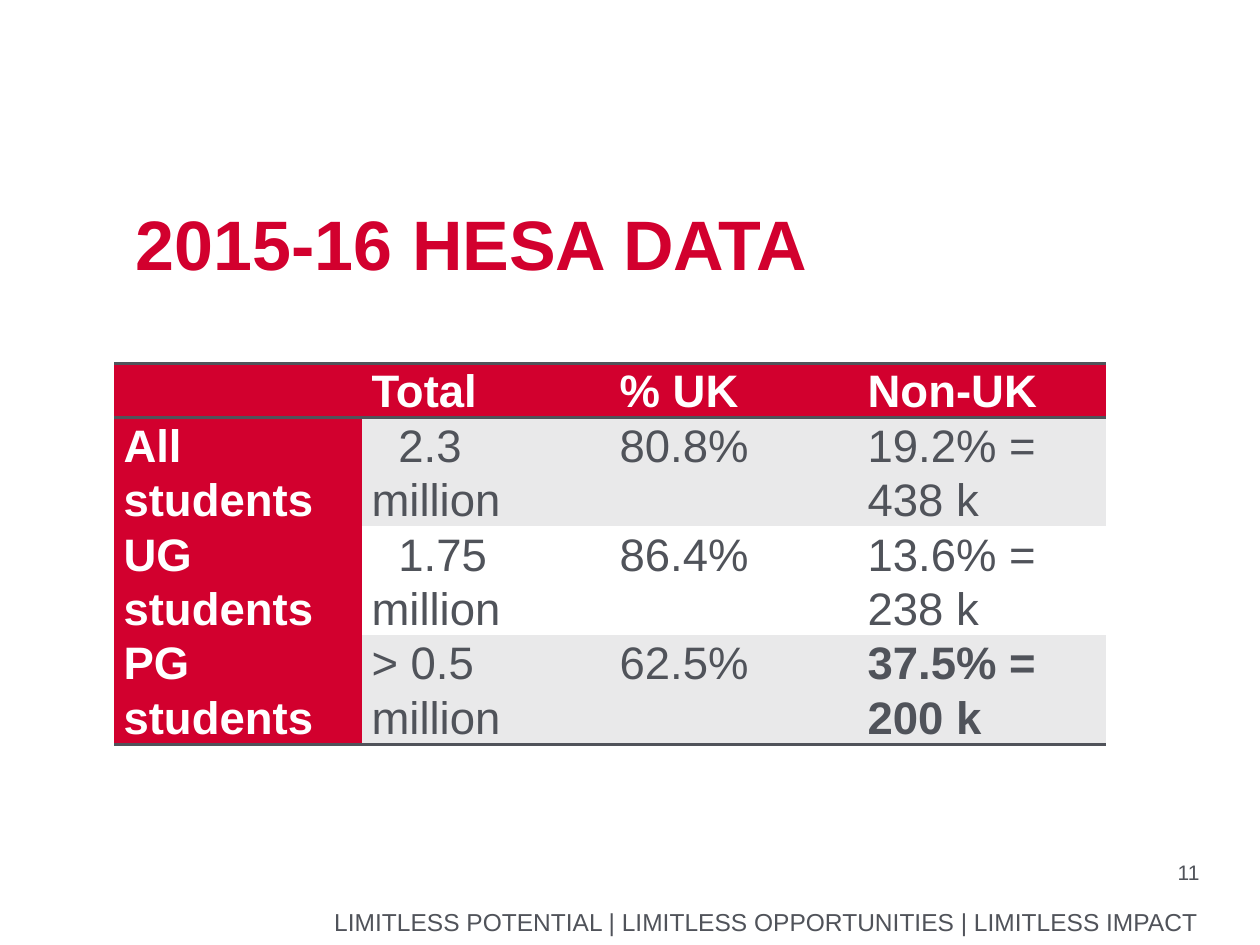
"""Build a slide with a table of student numbers by level and origin."""
from lxml.etree import SubElement as Sub
from pptx import Presentation
from pptx.dml.color import RGBColor
from pptx.enum.text import MSO_ANCHOR as Anchor, PP_ALIGN as Align
from pptx.oxml.ns import qn
from pptx.util import Cm, Pt

RED, GREY, PALE, WHITE = "D2002E", "50535A", "E9E9EA", "FFFFFF"
NO_GRID = "{2D5ABB26-0587-4C30-8999-92F81FD0307C}"
TITLE = "2015-16 HESA DATA"
MOTTO = "LIMITLESS POTENTIAL | LIMITLESS OPPORTUNITIES | LIMITLESS IMPACT"
NUMBER = "11"
ROWS = [
    ["", "Total", "% UK", "Non-UK"],
    ["All students", "2.3 million", "80.8%", "19.2% = 438 k"],
    ["UG students", "1.75 million", "86.4%", "13.6% = 238 k"],
    ["PG students", "> 0.5 million", "62.5%", "37.5% = 200 k"],
]
STRONG = {(3, 3)}
INDENT = {(1, 1), (2, 1)}
WIDE, LOW, HIGH = Cm(5), Cm(1.1), Cm(2.19)


def style(para, size, color, bold=False):
    font = para.font
    font.name, font.size, font.bold = "Arial", Pt(size), bold
    font.color.rgb = RGBColor.from_string(color)


def place(shape, left, top, width, height):
    shape.left, shape.top = Cm(left), Cm(top)
    shape.width, shape.height = Cm(width), Cm(height)


def fill_box(shape, text, size, color, bold=False, align=Align.LEFT, inset=0):
    frame = shape.text_frame
    frame.text = text
    frame.word_wrap = True
    frame.vertical_anchor = Anchor.BOTTOM
    frame.margin_left = Cm(inset)
    frame.margin_top = frame.margin_right = frame.margin_bottom = 0
    para = frame.paragraphs[0]
    para.alignment = align
    style(para, size, color, bold)


def rule(cell, side):
    line = Sub(cell._tc.get_or_add_tcPr(), qn("a:" + side), w=str(Pt(2)))
    Sub(Sub(line, qn("a:solidFill")), qn("a:srgbClr"), val=GREY)


def fill_cell(cell, row, col):
    head = row == 0 or col == 0
    if row == 0:
        rule(cell, "lnT")
    if row in (0, len(ROWS) - 1):
        rule(cell, "lnB")
    cell.fill.solid()
    back = RED if head else PALE if row % 2 else WHITE
    cell.fill.fore_color.rgb = RGBColor.from_string(back)
    cell.margin_left = cell.margin_right = Cm(0.19)
    cell.margin_top = cell.margin_bottom = 0
    cell.text = ROWS[row][col]
    para = cell.text_frame.paragraphs[0]
    para.line_spacing = 1.07
    if (row, col) in INDENT:
        para._p.get_or_add_pPr().set("indent", str(Cm(0.54)))
    style(para, 26, WHITE if head else GREY, head or (row, col) in STRONG)


def add_grid(slide):
    count = len(ROWS[0])
    deep = LOW + HIGH * (len(ROWS) - 1)
    frame = slide.shapes.add_table(
        len(ROWS), count, Cm(2.3), Cm(7.32), WIDE * count, deep)
    table = frame.table
    table.first_row = table.horz_banding = False
    table._tbl.tblPr.find(qn("a:tableStyleId")).text = NO_GRID
    for column in table.columns:
        column.width = WIDE
    for row, line in enumerate(table.rows):
        line.height = HIGH if row else LOW
        for col, cell in enumerate(line.cells):
            fill_cell(cell, row, col)


def main():
    deck = Presentation()
    deck.slide_width, deck.slide_height = Cm(25.4), Cm(19.05)
    slide = deck.slides.add_slide(deck.slide_layouts[5])
    title = slide.shapes.title
    place(title, 1.17, 3.43, 23.72, 2.31)
    fill_box(title, TITLE, 40, RED, bold=True, inset=1.57)
    add_grid(slide)
    for text, size, spot in [
        (MOTTO, 14, (5.36, 18.26, 18.8, 0.61)),
        (NUMBER, 12, (22.3, 17.32, 1.88, 0.6)),
    ]:
        box = slide.shapes.add_textbox(*map(Cm, spot))
        fill_box(box, text, size, GREY, align=Align.RIGHT)
        if text == NUMBER:
            box.text_frame.vertical_anchor = Anchor.TOP
    deck.save("out.pptx")


if __name__ == "__main__":
    main()
